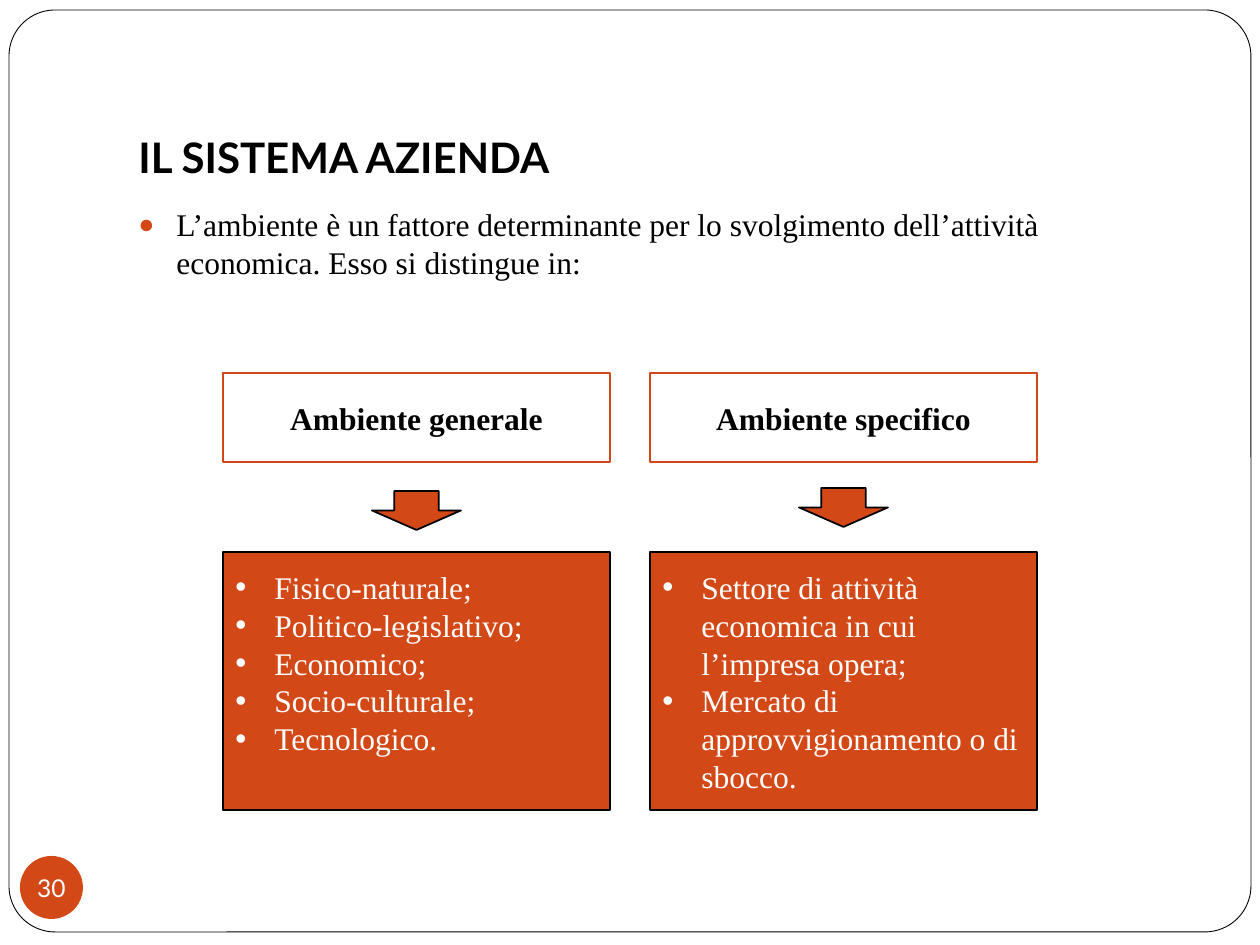
import pptx
import pptx.util
import pptx.dml.color
import pptx.enum.shapes
import pptx.enum.text
import pptx.oxml
import pptx.oxml.ns

RGB = pptx.dml.color.RGBColor
KIND = pptx.enum.shapes.MSO_SHAPE
ALIGN = pptx.enum.text.PP_ALIGN
ANCHOR = pptx.enum.text.MSO_ANCHOR
Pt = pptx.util.Pt

ORANGE = RGB(0xD3, 0x48, 0x17)
BLACK = RGB(0, 0, 0)
WHITE = RGB(0xFF, 0xFF, 0xFF)
SERIF, SANS = "Times New Roman", "Lato"

TITLE = "IL SISTEMA AZIENDA"
INTRO = ("L’ambiente è un fattore determinante per lo svolgimento "
         "dell’attività economica. Esso si distingue in:")
COLUMNS = [
    ("Ambiente generale", 491, [
        "Fisico-naturale;", "Politico-legislativo;", "Economico;",
        "Socio-culturale;", "Tecnologico."]),
    ("Ambiente specifico", 488, [
        "Settore di attività economica in cui l’impresa opera;",
        "Mercato di approvvigionamento o di sbocco."]),
]
NUMBER = "30"
LEFT, WIDE, STEP = 223, 387, 427
ARROW = 89


def px(n):
    return round(n * 914400 / 126)


def shape(kind, box, fill, line=None, width=1):
    item = slide.shapes.add_shape(kind, *map(px, box))
    item.shadow.inherit = False
    item.fill.solid()
    item.fill.fore_color.rgb = fill
    if line is None:
        item.line.fill.background()
    else:
        item.line.color.rgb = line
        item.line.width = Pt(width)
    return item


def write(item, lines, color, size=18, font=SERIF, bold=False,
          align=ALIGN.LEFT, anchor=ANCHOR.MIDDLE):
    frame = item.text_frame
    frame.word_wrap = True
    frame.vertical_anchor = anchor
    frame.text = "\n".join(lines)
    for para in frame.paragraphs:
        para.alignment = align
        for run in para.runs:
            run.font.name = font
            run.font.size = Pt(size)
            run.font.bold = bold
            run.font.color.rgb = color
    return frame


def bullet(para, indent, char, color=None, size=100):
    props = para._p.get_or_add_pPr()
    props.set("marL", str(px(indent)))
    props.set("indent", str(-px(indent)))
    tint = f'<a:buClr><a:srgbClr val="{color}"/></a:buClr>' if color else ""
    space = pptx.oxml.ns.nsdecls("a")
    marks = pptx.oxml.parse_xml(
        f'<a:pPr {space}>{tint}<a:buSzPct val="{size * 1000}"/>'
        f'<a:buFont typeface="Arial"/><a:buChar char="{char}"/></a:pPr>')
    props.extend(list(marks))


deck = pptx.Presentation()
deck.slide_width, deck.slide_height = px(1260), px(945)
slide = deck.slides.add_slide(deck.slide_layouts[6])

border = shape(KIND.ROUNDED_RECTANGLE, (9, 10, 1242, 922), WHITE, BLACK, 0.5)
border.adjustments[0] = 0.05

title = slide.shapes.add_textbox(*map(px, (126, 38, 1071, 157)))
frame = write(title, [TITLE], BLACK, 24, SANS, True, anchor=ANCHOR.BOTTOM)
frame.margin_bottom = px(13)

intro = slide.shapes.add_textbox(*map(px, (126, 199, 1071, 630)))
frame = write(intro, [INTRO], BLACK, anchor=ANCHOR.TOP)
frame.paragraphs[0].space_before = Pt(5.8)
bullet(frame.paragraphs[0], 38, "●", ORANGE, 85)

for i, (head, top, items) in enumerate(COLUMNS):
    x = LEFT + i * STEP
    label = shape(KIND.RECTANGLE, (x, 373, WIDE, 89), WHITE, ORANGE)
    write(label, [head], BLACK, bold=True, align=ALIGN.CENTER)

    panel = shape(KIND.RECTANGLE, (x, 552, WIDE, 258), ORANGE, BLACK)
    frame = write(panel, items, WHITE, anchor=ANCHOR.TOP)
    frame.margin_top = px(16)
    for para in frame.paragraphs:
        bullet(para, 39, "•")

    mid = x + (WIDE - ARROW) / 2
    shape(KIND.DOWN_ARROW, (mid, top, ARROW, 39), ORANGE, BLACK)

badge = shape(KIND.OVAL, (20, 856, 63, 63), ORANGE)
frame = write(badge, [NUMBER], WHITE, 14, SANS, align=ALIGN.CENTER)
frame.word_wrap = False
frame.margin_left = frame.margin_right = 0
frame.margin_top = frame.margin_bottom = 0

deck.save("out.pptx")
